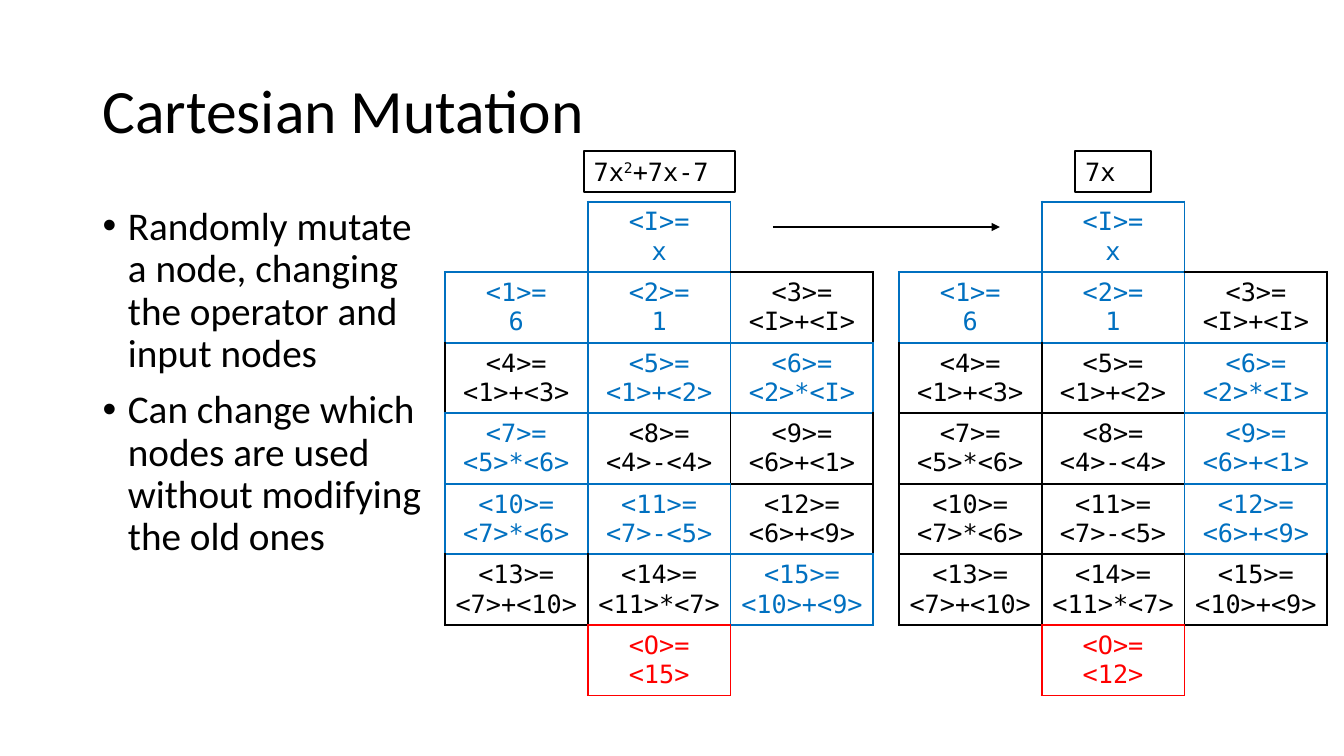
from lxml import etree
from pptx import Presentation
from pptx.dml.color import RGBColor
from pptx.enum.shapes import MSO_CONNECTOR, MSO_SHAPE
from pptx.enum.text import MSO_ANCHOR, MSO_AUTO_SIZE, PP_ALIGN
from pptx.oxml.ns import qn
from pptx.util import Cm, Pt

LEFT, CENTER = PP_ALIGN.LEFT, PP_ALIGN.CENTER
TOP, MIDDLE = MSO_ANCHOR.TOP, MSO_ANCHOR.MIDDLE
FIXED, GROW = MSO_AUTO_SIZE.NONE, MSO_AUTO_SIZE.SHAPE_TO_FIT_TEXT
RECT, STRAIGHT = MSO_SHAPE.RECTANGLE, MSO_CONNECTOR.STRAIGHT

HEX = {"idle": "000000", "used": "0070C0", "out": "FF0000"}
RANK = ["out", "used", "idle"]
SANS, MONO = "Calibri", "DejaVu Sans Mono"
EDGE = Pt(1.5)
NODES = [
    "6", "1", "<I>+<I>",
    "<1>+<3>", "<1>+<2>", "<2>*<I>",
    "<5>*<6>", "<4>-<4>", "<6>+<1>",
    "<7>*<6>", "<7>-<5>", "<6>+<9>",
    "<7>+<10>", "<11>*<7>", "<10>+<9>",
]
COLS = 3
SIDES = {"L": (0, -1), "R": (0, 1), "T": (-1, 0), "B": (1, 0)}


def style(par, size, face, kind="idle"):
    """Format every run of a paragraph."""
    for run in par.runs:
        run.font.size = Pt(size)
        run.font.name = face
        run.font.color.rgb = RGBColor.from_string(HEX[kind])


def place(shape, left, top, width, height):
    """Move and size a shape, in centimetres."""
    shape.left, shape.top = Cm(left), Cm(top)
    shape.width, shape.height = Cm(width), Cm(height)


def add_title(slide, text):
    """Fill the title placeholder."""
    title = slide.shapes.title
    place(title, 2.33, 1.02, 29.21, 3.68)
    frame = title.text_frame
    frame.text = text
    frame.auto_size = FIXED
    frame.vertical_anchor = MIDDLE
    par = frame.paragraphs[0]
    par.alignment = LEFT
    par.line_spacing = 0.9
    style(par, 44, SANS)


def add_list(slide, items):
    """Fill the body placeholder with bullets."""
    body = slide.placeholders[1]
    place(body, 2.33, 5.08, 8.89, 12.09)
    frame = body.text_frame
    frame.text = "\n".join(items)
    frame.auto_size = FIXED
    for par in frame.paragraphs:
        par.line_spacing = 0.9
        par.space_before = Pt(10)
        props = par._p.get_or_add_pPr()
        props.set("marL", str(Cm(0.64)))
        props.set("indent", str(-Cm(0.64)))
        style(par, 28, SANS)


def make_grid(used, out):
    """Map each (row, column) to its text and kind."""
    grid = {(0, 1): ("<I>=\nx", "used")}
    for i, rule in enumerate(NODES):
        row, col = divmod(i, COLS)
        kind = "used" if i + 1 in used else "idle"
        grid[row + 1, col] = (f"<{i + 1}>=\n{rule}", kind)
    grid[len(NODES) // COLS + 1, 1] = (f"<O>=\n<{out}>", "out")
    return grid


def set_edges(cell, kinds):
    """Draw the four borders of a cell, given their kinds."""
    props = cell._tc.get_or_add_tcPr()
    for i, (side, kind) in enumerate(kinds.items()):
        line = etree.Element(qn(f"a:ln{side}"), w=str(EDGE))
        if kind:
            fill = etree.SubElement(line, qn("a:solidFill"))
            etree.SubElement(fill, qn("a:srgbClr"), val=HEX[kind])
        else:
            etree.SubElement(line, qn("a:noFill"))
        props.insert(i, line)


def add_graph(slide, left, used, out):
    """Add a table of nodes where the strongest neighbour colours an edge."""
    grid = make_grid(used, out)
    rows = len(NODES) // COLS + 2
    table = slide.shapes.add_table(
        rows, COLS, Cm(left), Cm(5.08), Cm(10.8), Cm(12.45)).table
    table.first_row = table.horz_banding = False
    for row in range(rows):
        for col in range(COLS):
            cell = table.cell(row, col)
            cell.fill.background()
            cell.vertical_anchor = MIDDLE
            text, kind = grid.get((row, col), ("", None))
            if kind:
                cell.text_frame.text = text
                for par in cell.text_frame.paragraphs:
                    par.alignment = CENTER
                    style(par, 18, MONO, kind)
            edges = {}
            for side, (down, over) in SIDES.items():
                near = grid.get((row + down, col + over), ("", None))[1]
                edges[side] = next(
                    (k for k in RANK if k in (kind, near)), None)
            set_edges(cell, edges)


def add_label(slide, left, width, parts):
    """Add a framed formula whose every second part is raised."""
    box = slide.shapes.add_shape(RECT, Cm(left), Cm(3.81), Cm(width), Cm(1.02))
    box.shadow.inherit = False
    box.fill.background()
    box.line.color.rgb = RGBColor.from_string(HEX["idle"])
    box.line.width = EDGE
    frame = box.text_frame
    frame.word_wrap = True
    frame.auto_size = GROW
    frame.vertical_anchor = TOP
    par = frame.paragraphs[0]
    par.alignment = LEFT
    for i, part in enumerate(parts):
        run = par.add_run()
        run.text = part
        if i % 2:
            run._r.get_or_add_rPr().set("baseline", "30000")
    style(par, 18, MONO)


def add_arrow(slide, start, end, top):
    """Add a level arrow."""
    arrow = slide.shapes.add_connector(
        STRAIGHT, Cm(start), Cm(top), Cm(end), Cm(top))
    arrow.line.color.rgb = RGBColor.from_string(HEX["idle"])
    arrow.line.width = EDGE
    props = arrow._element.spPr
    etree.SubElement(props.get_or_add_ln(), qn("a:tailEnd"), type="triangle")
    etree.SubElement(props, qn("a:effectLst"))


def main():
    """Build and save the slide."""
    deck = Presentation()
    deck.slide_width, deck.slide_height = Cm(33.87), Cm(19.05)
    slide = deck.slides.add_slide(deck.slide_layouts[1])
    add_title(slide, "Cartesian Mutation")
    add_list(slide, [
        "Randomly mutate a node, changing the operator and input nodes",
        "Can change which nodes are used without modifying the old ones",
    ])
    add_graph(slide, 11.21, {1, 2, 5, 6, 7, 10, 11, 15}, 15)
    add_graph(slide, 22.65, {1, 2, 6, 9, 12}, 12)
    add_label(slide, 14.71, 3.81, ["7x", "2", "+7x-7"])
    add_label(slide, 27.1, 1.91, ["7x"])
    add_arrow(slide, 19.48, 25.2, 5.72)
    deck.save("out.pptx")


if __name__ == "__main__":
    main()
